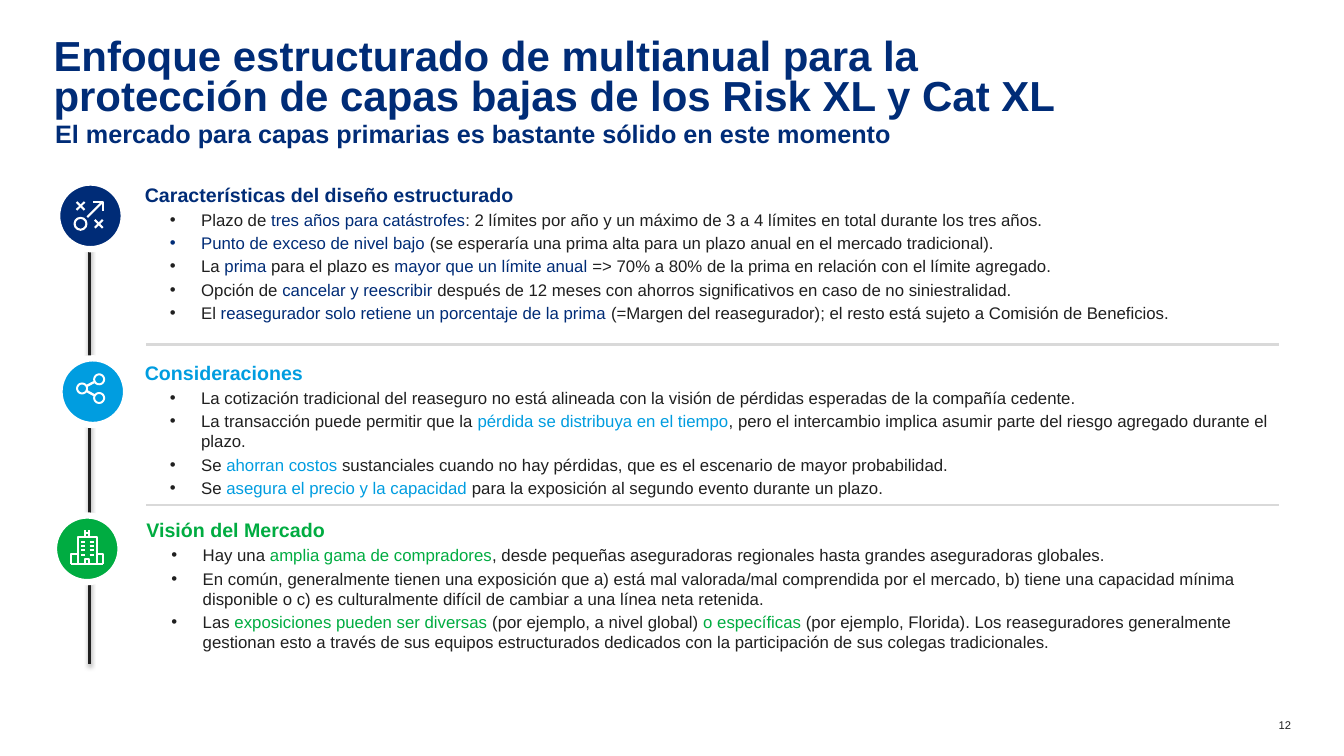
import math

import pptx
import pptx.dml.color
import pptx.enum.shapes
import pptx.enum.text
import pptx.oxml
import pptx.oxml.ns
import pptx.util
from pptx.util import Cm

NAVY, SKY, GREEN = "002C77", "009DE0", "00AC41"
INK, GREY, WHITE = "202020", "D9D9D9", "FFFFFF"
CIRCLE = 1.68
DESIGN_POINTS = [
    "Plazo de |tres años para catástrofes|: 2 límites por año y un máximo de 3 a 4 límites en total durante los tres años.",
    "|Punto de exceso de nivel bajo |(se esperaría una prima alta para un plazo anual en el mercado tradicional).",
    "La |prima| para el plazo es |mayor que un límite anual |=> 70% a 80% de la prima en relación con el límite agregado.",
    "Opción de |cancelar y reescribir |después de 12 meses con ahorros significativos en caso de no siniestralidad.",
    "El |reasegurador solo retiene un porcentaje de la prima |(=Margen del reasegurador); el resto está sujeto a Comisión de Beneficios.",
]
CONSIDERATION_POINTS = [
    "La cotización tradicional del reaseguro no está alineada con la visión de pérdidas esperadas de la compañía cedente.",
    "La transacción puede permitir que la |pérdida se distribuya en el tiempo|, pero el intercambio implica asumir parte del riesgo agregado durante el plazo.",
    "Se |ahorran costos |sustanciales cuando no hay pérdidas, que es el escenario de mayor probabilidad.",
    "Se |asegura el precio y la capacidad |para la exposición al segundo evento durante un plazo.",
]
MARKET_POINTS = [
    "Hay una |amplia gama de compradores|, desde pequeñas aseguradoras regionales hasta grandes aseguradoras globales.",
    "En común, generalmente tienen una exposición que a) está mal valorada/mal comprendida por el mercado, b) tiene una capacidad mínima disponible o c) es culturalmente difícil de cambiar a una línea neta retenida.",
    "Las |exposiciones pueden ser diversas |(por ejemplo, a nivel global) |o específicas |(por ejemplo, Florida). Los reaseguradores generalmente gestionan esto a través de sus equipos estructurados dedicados con la participación de sus colegas tradicionales.",
]


def colour(hex_string):
    return pptx.dml.color.RGBColor.from_string(hex_string)


def add_box(page, left, top, width, height):
    frame = page.shapes.add_textbox(Cm(left), Cm(top), Cm(width), Cm(height)).text_frame
    frame.word_wrap = True
    frame.margin_left = frame.margin_right = frame.margin_top = frame.margin_bottom = 0
    return frame


def write(para, text, size=12, bold=False, ink=INK, accent=INK):
    """Write text; pieces between bars take the accent colour, newlines break the line."""
    for number, line in enumerate(text.split("\n")):
        if number:
            para.add_line_break()
        for position, piece in enumerate(line.split("|")):
            if piece:
                span = para.add_run()
                span.text = piece
                span.font.name = "Arial"
                span.font.size = pptx.util.Pt(size)
                span.font.bold = bold
                span.font.color.rgb = colour(accent if position % 2 else ink)


def add_bullet(para):
    para.space_before = pptx.util.Pt(2.3)
    properties = para._p.get_or_add_pPr()
    properties.set("lvl", "1")
    properties.set("marL", str(Cm(1.42)))
    properties.set("indent", str(Cm(-0.79)))
    namespace = pptx.oxml.ns.nsdecls("a")
    properties.append(pptx.oxml.parse_xml(f'<a:buFont {namespace} typeface="Arial"/>'))
    properties.append(pptx.oxml.parse_xml(f'<a:buChar {namespace} char="•"/>'))


def add_section(page, place, heading, accent, points):
    frame = add_box(page, *place)
    write(frame.paragraphs[0], heading, size=14, bold=True, ink=accent)
    for point in points:
        para = frame.add_paragraph()
        add_bullet(para)
        write(para, point, accent=accent)


def add_line(page, start, end, ink, weight, shadow=""):
    line = page.shapes.add_connector(
        pptx.enum.shapes.MSO_CONNECTOR.STRAIGHT, *map(Cm, start + end))
    line.line.color.rgb = colour(ink)
    line.line.width = pptx.util.Pt(weight)
    namespace = pptx.oxml.ns.nsdecls("a")
    line._element.spPr.append(
        pptx.oxml.parse_xml(f"<a:effectLst {namespace}>{shadow}</a:effectLst>"))


def add_circle(page, centre, diameter, fill, weight):
    corner = [Cm(value - diameter / 2) for value in centre]
    circle = page.shapes.add_shape(
        pptx.enum.shapes.MSO_SHAPE.OVAL, *corner, Cm(diameter), Cm(diameter))
    circle.shadow.inherit = False
    circle.fill.solid()
    circle.fill.fore_color.rgb = colour(fill)
    circle.line.color.rgb = colour(WHITE)
    circle.line.width = pptx.util.Pt(weight)


def shift(centre, point):
    return centre[0] + point[0], centre[1] + point[1]


def build_outline(page, centre, contours, close):
    """Return one freeform made of contours given from the centre."""
    placed = [[tuple(map(Cm, shift(centre, point))) for point in contour]
              for contour in contours]
    builder = page.shapes.build_freeform(*placed[0][0], scale=1.0)
    for number, corners in enumerate(placed):
        if number:
            builder.move_to(*corners[0])
        builder.add_line_segments(corners[1:], close=close)
    outline = builder.convert_to_shape()
    outline.shadow.inherit = False
    return outline


def add_stroke(page, centre, points):
    if len(points) == 2:
        add_line(page, *[shift(centre, point) for point in points], WHITE, 1.5)
        return
    outline = build_outline(page, centre, [points], close=False)
    outline.fill.background()
    outline.line.color.rgb = colour(WHITE)
    outline.line.width = pptx.util.Pt(1.5)


def add_strategy_icon(page, centre):
    add_stroke(page, centre, [(-0.08, 0.03), (0.31, -0.36)])
    add_stroke(page, centre, [(0.06, -0.36), (0.31, -0.36), (0.31, -0.13)])
    for x, y in [(-0.25, -0.25), (0.21, 0.2)]:
        for rise in (-0.1, 0.1):
            add_stroke(page, centre, [(x - 0.1, y - rise), (x + 0.1, y + rise)])
    add_circle(page, shift(centre, (-0.25, 0.2)), 0.3, NAVY, 1.5)


def ring_contour(node, radius):
    angles = [math.radians(10 * step) for step in range(36)]
    return [shift(node, (radius * math.cos(a), radius * math.sin(a))) for a in angles]


def link_contour(start, end, gap, half):
    """Bar between two nodes, stopping at the given gap from each."""
    length = math.dist(start, end)
    across, down = (end[0] - start[0]) / length, (end[1] - start[1]) / length
    return [shift(start, (across * along - down * side, down * along + across * side))
            for along, side in [(gap, -half), (length - gap, -half),
                                (length - gap, half), (gap, half)]]


def add_share_icon(page, centre):
    hub, *leaves = nodes = [(-0.27, -0.08), (0.16, -0.31), (0.16, 0.16)]
    contours = [ring_contour(node, radius) for node in nodes for radius in (0.15, 0.1)]
    contours += [link_contour(hub, leaf, 0.14, 0.03) for leaf in leaves]
    glyph = build_outline(page, centre, contours, close=True)
    glyph.fill.solid()
    glyph.fill.fore_color.rgb = colour(WHITE)
    glyph.line.fill.background()


def add_building_icon(page, centre):
    add_stroke(page, centre, [(-0.24, 0.38), (-0.24, -0.29), (0.24, -0.29), (0.24, 0.38)])
    add_stroke(page, centre, [(-0.05, 0.38), (-0.05, 0.26), (0.05, 0.26), (0.05, 0.38)])
    add_stroke(page, centre, [(-0.4, 0.38), (0.4, 0.38)])
    add_stroke(page, centre, [(-0.05, -0.41), (0.05, -0.41)])
    for side in (-1, 1):
        add_stroke(page, centre, [(side * 0.24, 0.13), (side * 0.4, 0.13), (side * 0.4, 0.38)])
        add_stroke(page, centre, [(side * 0.05, -0.29), (side * 0.05, -0.48)])
        for row in range(4):
            y = -0.18 + 0.11 * row
            add_stroke(page, centre, [(side * 0.06, y), (side * 0.16, y)])


def main():
    deck = pptx.Presentation()
    deck.slide_width, deck.slide_height = Cm(33.87), Cm(19.05)
    page = deck.slides.add_slide(deck.slide_layouts[6])

    title = add_box(page, 1.35, 0.99, 31.17, 1.37).paragraphs[0]
    title.line_spacing = 0.8
    write(title, "Enfoque estructurado de multianual para la \n"
          "protección de capas bajas de los Risk XL y Cat XL", size=30, bold=True, ink=NAVY)
    write(add_box(page, 1.39, 2.98, 31.19, 0.89).paragraphs[0],
          "El mercado para capas primarias es bastante sólido en este momento",
          size=18, bold=True, ink=NAVY)
    number = add_box(page, 31.75, 18.11, 0.79, 0.33).paragraphs[0]
    number.alignment = pptx.enum.text.PP_ALIGN.RIGHT
    write(number, "12", size=8)

    spine_shadow = (f'<a:outerShdw blurRad="{pptx.util.Pt(3.1)}" dist="{pptx.util.Pt(1.6)}" '
                    'dir="5400000"><a:srgbClr val="000000"><a:alpha val="38000"/>'
                    '</a:srgbClr></a:outerShdw>')
    add_line(page, (2.26, 4.98), (2.26, 16.74), INK, 2, spine_shadow)
    for y in (8.68, 12.73):
        add_line(page, (3.68, y), (32.23, y), GREY, 1.5)

    sections = [
        ((3.65, 4.6, 28.14, 3.3), "Características del diseño estructurado", NAVY,
         DESIGN_POINTS, (2.28, 5.44), add_strategy_icon),
        ((3.65, 9.09, 29.51, 3.89), "Consideraciones", SKY,
         CONSIDERATION_POINTS, (2.34, 9.87), add_share_icon),
        ((3.69, 13.06, 28.55, 3.73), "Visión del Mercado", GREEN,
         MARKET_POINTS, (2.2, 13.83), add_building_icon),
    ]
    for place, heading, accent, points, centre, add_icon in sections:
        add_section(page, place, heading, accent, points)
        add_circle(page, centre, CIRCLE, accent, 4.5)
        add_icon(page, centre)

    deck.save("out.pptx")


if __name__ == "__main__":
    main()
